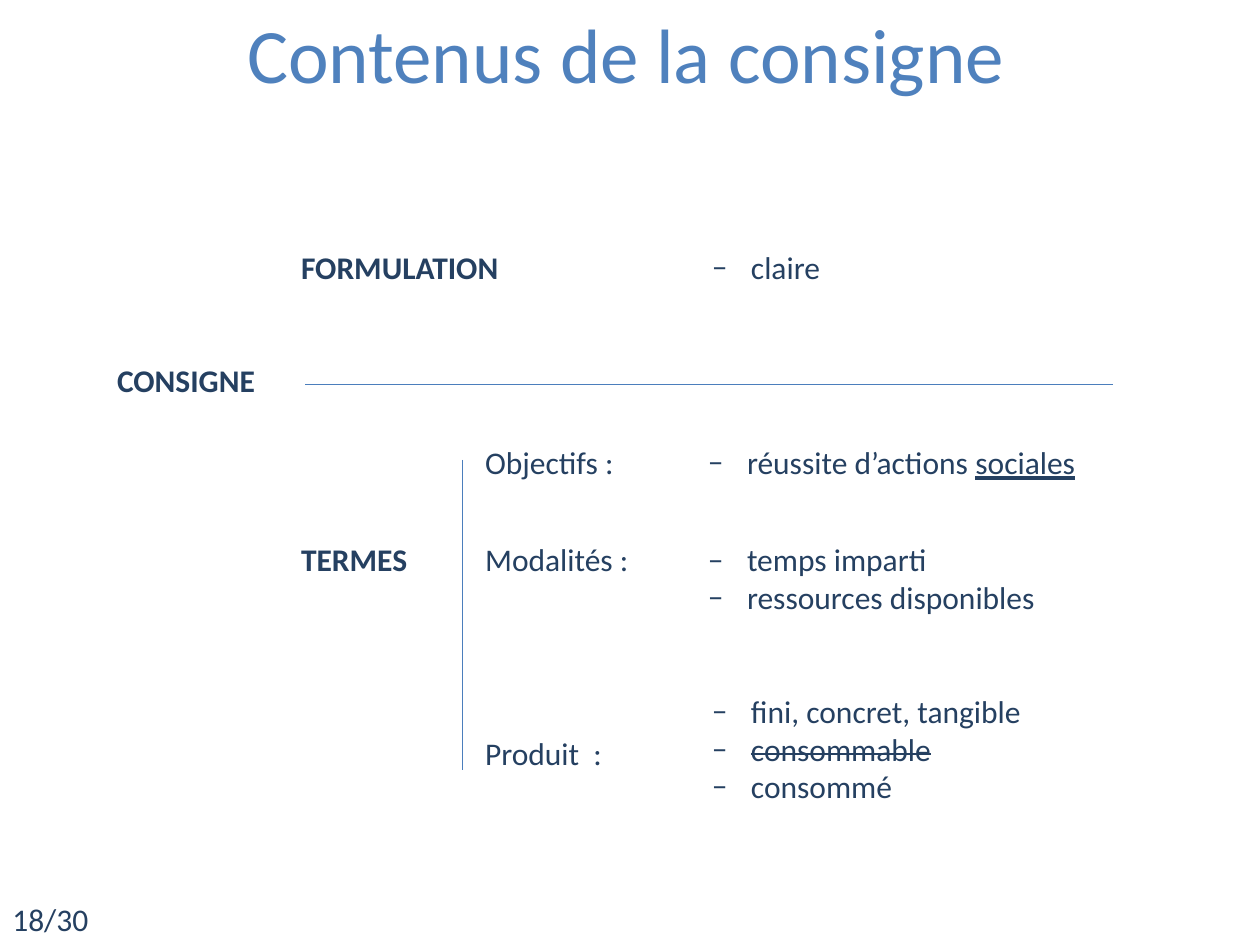
from lxml import etree
from pptx import Presentation
from pptx.dml.color import RGBColor
from pptx.enum.shapes import MSO_CONNECTOR
from pptx.enum.text import MSO_AUTO_SIZE, PP_ALIGN
from pptx.oxml.ns import qn
from pptx.util import Cm, Pt

STRAIGHT = MSO_CONNECTOR.STRAIGHT
GROW = MSO_AUTO_SIZE.SHAPE_TO_FIT_TEXT
CENTER = PP_ALIGN.CENTER
FONT = "Calibri"
NAVY, BLUE, RULE = "254061", "4F81BD", "4B7EBC"
ROW, STEP, HANG = 1.02, 0.77, 0.79


def color(code):
    """Turn a hex string into a colour."""
    return RGBColor.from_string(code)


def style(frame, size=18, code=NAVY, bold=False):
    """Format every run of a text frame."""
    for para in frame.paragraphs:
        for run in para.runs:
            font = run.font
            font.name, font.size, font.bold = FONT, Pt(size), bold
            font.color.rgb = color(code)


def add_box(slide, left, top, width, height=ROW):
    """Add an empty box that grows with its text and return its frame."""
    box = slide.shapes.add_textbox(Cm(left), Cm(top), Cm(width), Cm(height))
    frame = box.text_frame
    frame.word_wrap = False
    frame.auto_size = GROW
    return frame


def add_label(slide, text, left, top, width, bold=False):
    """Add a one-line label."""
    frame = add_box(slide, left, top, width)
    frame.text = text
    style(frame, bold=bold)


def add_title(slide, text):
    """Add the centred slide title."""
    box = slide.shapes.add_textbox(Cm(1.19), Cm(0), Cm(22.86), Cm(3.89))
    frame = box.text_frame
    frame.word_wrap = True
    frame.text = text
    frame.paragraphs[0].alignment = CENTER
    style(frame, 44, BLUE)


def add_dash(para):
    """Give a paragraph a hanging dash bullet."""
    props = para._p.get_or_add_pPr()
    props.set("marL", str(Cm(HANG)))
    props.set("indent", str(-Cm(HANG)))
    etree.SubElement(props, qn("a:buFont")).set("typeface", FONT)
    etree.SubElement(props, qn("a:buChar")).set("char", "–")


def add_list(slide, items, left, top, width):
    """Add a dashed list and return its paragraphs."""
    frame = add_box(slide, left, top, width, ROW + STEP * (len(items) - 1))
    frame.text = "\n".join(items)
    for para in frame.paragraphs:
        add_dash(para)
    return frame


def add_rule(slide, left, top, right, bottom):
    """Add a thin straight line without shadow."""
    line = slide.shapes.add_connector(
        STRAIGHT, Cm(left), Cm(top), Cm(right), Cm(bottom))
    line.line.color.rgb = color(RULE)
    line.line.width = Pt(0.75)
    etree.SubElement(line._element.spPr, qn("a:effectLst"))


def main():
    """Build the slide and save it."""
    deck = Presentation()
    deck.slide_width, deck.slide_height = Cm(25.4), Cm(19.05)
    slide = deck.slides.add_slide(deck.slide_layouts[6])

    add_title(slide, "Contenus de la consigne")
    for text, left, top, width in (
            ("CONSIGNE", 2.11, 7.16, 3.33),
            ("FORMULATION", 5.82, 4.88, 4.52),
            ("TERMES", 5.82, 10.77, 2.67)):
        add_label(slide, text, left, top, width, bold=True)
    for text, left, top, width in (
            ("Objectifs :", 9.53, 8.81, 3.12),
            ("Modalités :", 9.53, 10.77, 3.43),
            ("Produit  :", 9.53, 14.68, 2.9),
            ("18/30", 0, 18.01, 2.06)):
        add_label(slide, text, left, top, width)

    goals = add_list(slide, ["réussite d’actions "], 14.02, 8.81, 8)
    social = goals.paragraphs[0].add_run()
    social.text = "sociales"
    social.font.underline = True
    means = add_list(
        slide, ["temps imparti", "ressources disponibles"], 14.02, 10.77, 7.19)
    result = add_list(
        slide, ["fini, concret, tangible", "consommable", "consommé"],
        14.1, 13.82, 6.83)
    struck = result.paragraphs[1].runs[0]
    struck._r.get_or_add_rPr().set("strike", "sngStrike")
    clear = add_list(slide, ["claire"], 14.1, 4.88, 2.72)
    for frame in (goals, means, result, clear):
        style(frame)

    add_rule(slide, 9.32, 9.27, 9.32, 15.52)
    add_rule(slide, 6.15, 7.75, 22.43, 7.75)
    deck.save("out.pptx")


if __name__ == "__main__":
    main()
